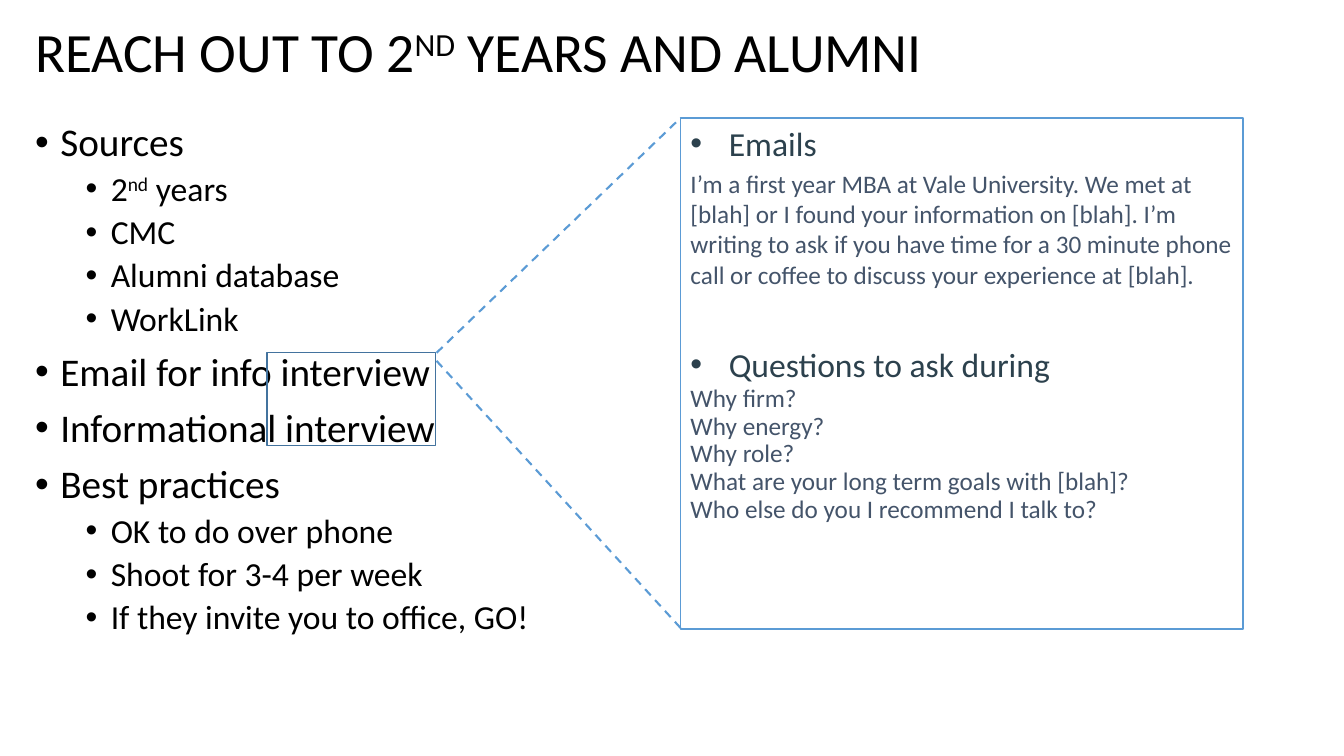
"""Builds the slide on reaching out to second-year students and alumni."""
from lxml import etree
from pptx import Presentation
from pptx.dml.color import RGBColor
from pptx.enum.dml import MSO_LINE
from pptx.enum.shapes import MSO_CONNECTOR, MSO_SHAPE
from pptx.enum.text import MSO_ANCHOR, PP_ALIGN
from pptx.oxml.ns import qn
from pptx.util import Inches, Pt

RECT = MSO_SHAPE.RECTANGLE
STRAIGHT = MSO_CONNECTOR.STRAIGHT
DASH = MSO_LINE.DASH
TOP, MIDDLE = MSO_ANCHOR.TOP, MSO_ANCHOR.MIDDLE
LEFT = PP_ALIGN.LEFT
BLACK = RGBColor(0x00, 0x00, 0x00)
WHITE = RGBColor(0xFF, 0xFF, 0xFF)
HEADING = RGBColor(0x2C, 0x41, 0x4D)
SLATE = RGBColor(0x44, 0x54, 0x6A)
BLUE = RGBColor(0x5B, 0x9B, 0xD5)
DARK_BLUE = RGBColor(0x43, 0x73, 0x9E)


def add_text(tf, text, size, color, spacing=1.0, before=0, margin=0, hanging=0, level=0):
    """Adds a paragraph; text between bars is superscript, a hanging indent takes a bullet."""
    p = tf.paragraphs[0]
    if p.runs:
        p = tf.add_paragraph()
    p.alignment = LEFT
    p.level = level
    p.line_spacing = spacing
    p.space_before = Pt(before)
    pPr = p._p.get_or_add_pPr()
    pPr.set("marL", str(Inches(margin)))
    pPr.set("indent", str(-Inches(hanging)))
    if hanging:
        etree.SubElement(pPr, qn("a:buFont")).set("typeface", "Arial")
        etree.SubElement(pPr, qn("a:buChar")).set("char", "•")
    for i, part in enumerate(text.split("|")):
        r = p.add_run()
        r.text = part
        r.font.name = "Calibri"
        r.font.size = Pt(size)
        r.font.color.rgb = color
        if i % 2:
            r._r.get_or_add_rPr().set("baseline", "30000")


def add_frame(shape, anchor):
    """Prepares the text frame of a shape."""
    tf = shape.text_frame
    tf.word_wrap = True
    tf.vertical_anchor = anchor
    return tf


prs = Presentation()
prs.slide_width = Inches(13.33)
prs.slide_height = Inches(7.5)
s = prs.slides.add_slide(prs.slide_layouts[6])

title = s.shapes.add_textbox(Inches(0.25), Inches(0.17), Inches(11.77), Inches(0.75))
add_text(add_frame(title, MIDDLE), "REACH OUT TO 2|ND| YEARS AND ALUMNI", 39.6, BLACK, 0.9)

outline = [
    ("Sources", ["2|nd| years", "CMC", "Alumni database", "WorkLink"]),
    ("Email for info interview", []),
    ("Informational interview", []),
    ("Best practices", ["OK to do over phone", "Shoot for 3-4 per week",
                        "If they invite you to office, GO!"]),
]
body = s.shapes.add_textbox(Inches(0.25), Inches(1.17), Inches(5.58), Inches(5.07))
tf = add_frame(body, TOP)
for topic, details in outline:
    add_text(tf, topic, 28, BLACK, 0.9, 10, 0.25, 0.25)
    for detail in details:
        add_text(tf, detail, 24, BLACK, 0.9, 5, 0.75, 0.25, 1)

panel = s.shapes.add_shape(RECT, Inches(6.75), Inches(1.17), Inches(5.58), Inches(5.07))
panel.shadow.inherit = False
panel.fill.solid()
panel.fill.fore_color.rgb = WHITE
panel.line.color.rgb = BLUE
panel.line.width = Pt(1)

email = ("I’m a first year MBA at Vale University. We met at [blah] or I found your "
         "information on [blah]. I’m writing to ask if you have time for a 30 minute "
         "phone call or coffee to discuss your experience at [blah].")
questions = ["Why firm?", "Why energy?", "Why role?",
             "What are your long term goals with [blah]?",
             "Who else do you I recommend I talk to?"]
tf = add_frame(panel, TOP)
add_text(tf, "Emails", 24, HEADING, 1.0, 4.8, 0.38, 0.38)
add_text(tf, email, 18, SLATE, 1.0, 3.6, level=1)
add_text(tf, "Questions to ask during", 24, HEADING, 1.0, 39, 0.38, 0.38)
for question in questions:
    add_text(tf, question, 18, SLATE, 0.75, 3.6, level=1)

highlight = s.shapes.add_shape(RECT, Inches(2.65), Inches(3.5), Inches(1.67), Inches(0.92))
highlight.shadow.inherit = False
highlight.fill.background()
highlight.line.color.rgb = DARK_BLUE
highlight.line.width = Pt(1)

for start_y, end_y in [(3.5, 1.17), (3.58, 6.23)]:
    guide = s.shapes.add_connector(STRAIGHT, Inches(4.33), Inches(start_y),
                                   Inches(6.75), Inches(end_y))
    guide.line.color.rgb = BLUE
    guide.line.width = Pt(1.5)
    guide.line.dash_style = DASH
    etree.SubElement(guide._element.spPr, qn("a:effectLst"))

prs.save("out.pptx")
